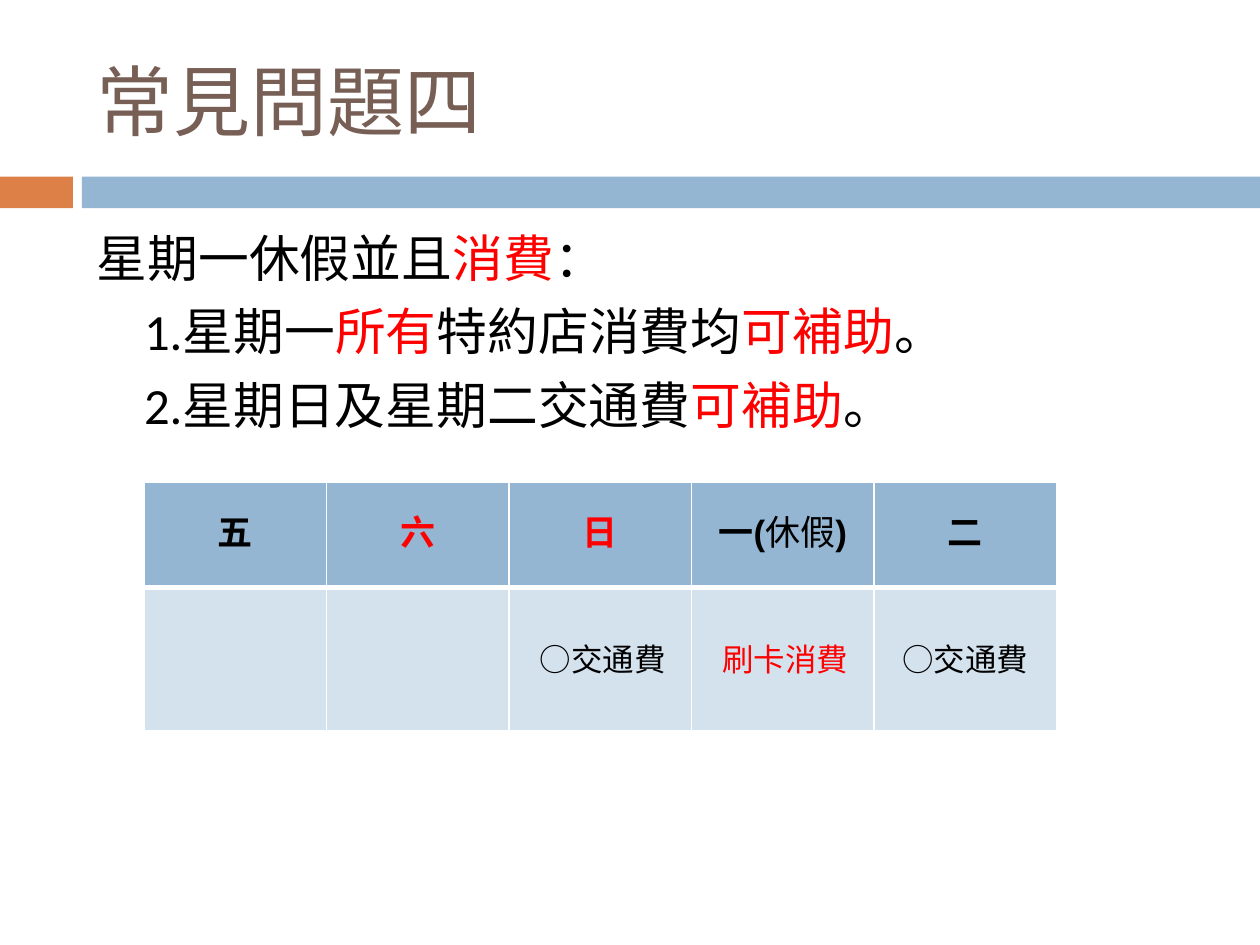
from collections import namedtuple
from dataclasses import dataclass

from lxml import etree
from pptx import Presentation
from pptx.dml.color import RGBColor
from pptx.enum.shapes import MSO_SHAPE
from pptx.enum.text import MSO_ANCHOR, MSO_AUTO_SIZE, PP_ALIGN
from pptx.oxml.ns import qn
from pptx.util import Cm, Pt

RECTANGLE = MSO_SHAPE.RECTANGLE
MIDDLE, TOP = MSO_ANCHOR.MIDDLE, MSO_ANCHOR.TOP
LEFT, CENTER = PP_ALIGN.LEFT, PP_ALIGN.CENTER
NO_AUTOFIT = MSO_AUTO_SIZE.NONE

Box = namedtuple("Box", "left top width height")


@dataclass(frozen=True)
class Theme:
    title: str = "775F55"
    ink: str = "000000"
    alert: str = "FF0000"
    accent: str = "DD8047"
    band: str = "94B6D2"
    pale: str = "D4E2ED"
    rule: str = "FFFFFF"
    font: str = "Calibri"
    table_font: str = "Arial"
    title_size: int = 44
    body_size: int = 29
    head_size: int = 20
    cell_size: int = 18


THEME = Theme()
INK, ALERT = THEME.ink, THEME.alert

BODY_LINES = [
    (0, [("星期一休假並且", INK), ("消費", ALERT), ("：", INK)]),
    (0.95, [("1.星期一", INK), ("所有", ALERT), ("特約店消費均", INK),
            ("可補助", ALERT), ("。", INK)]),
    (0.95, [("2.星期日及星期二交通費", INK), ("可補助", ALERT), ("。", INK)]),
]
HEAD_CELLS = [
    [("五", INK, True)],
    [("六", ALERT, True)],
    [("日", ALERT, True)],
    [("一(", INK, True), ("休假", INK, False), (")", INK, True)],
    [("二", INK, True)],
]
DAY_CELLS = [
    [],
    [],
    [("○交通費", INK, False)],
    [("刷卡消費", ALERT, False)],
    [("○交通費", INK, False)],
]
NUDGES = {2: 0.1, 3: 0.1}


def apply(target, values):
    for name, value in values.items():
        setattr(target, name, value)


def place(shape, box):
    apply(shape, {name: Cm(value) for name, value in box._asdict().items()})


def add_span(para, text, color, size, font=THEME.font, bold=False):
    span = para.add_run()
    span.text = text
    apply(span.font, {"name": font, "size": Pt(size), "bold": bold})
    span.font.color.rgb = RGBColor.from_string(color)


def paint(fill, color):
    fill.solid()
    fill.fore_color.rgb = RGBColor.from_string(color)


def draw_title(page, box):
    title = page.shapes.title
    place(title, box)
    apply(title.text_frame, {"vertical_anchor": MIDDLE, "auto_size": NO_AUTOFIT})
    para = title.text_frame.paragraphs[0]
    para.alignment = LEFT
    add_span(para, "常見問題四", THEME.title, THEME.title_size)


def draw_band(page, box):
    accent_width, gap = 1.47, 0.18
    start = accent_width + gap
    bars = [(0, accent_width, THEME.accent), (start, box.width - start, THEME.band)]
    for offset, width, color in bars:
        bar = page.shapes.add_shape(
            RECTANGLE, Cm(box.left + offset), Cm(box.top), Cm(width), Cm(box.height))
        bar.shadow.inherit = False
        paint(bar.fill, color)
        bar.line.fill.background()


def draw_body(page, box):
    body = page.placeholders[1]
    place(body, box)
    frame = body.text_frame
    apply(frame, {"vertical_anchor": TOP, "auto_size": NO_AUTOFIT})
    for index, (indent, spans) in enumerate(BODY_LINES):
        para = frame.add_paragraph() if index else frame.paragraphs[0]
        apply(para, {"alignment": LEFT, "space_before": Pt(7)})
        properties = para._p.get_or_add_pPr()
        properties.set("marL", str(Cm(indent)))
        properties.set("indent", "0")
        etree.SubElement(properties, qn("a:buNone"))
        for text, color in spans:
            add_span(para, text, color, THEME.body_size)


def set_borders(cell, widths):
    properties = cell._tc.get_or_add_tcPr()
    for index, (side, width) in enumerate(zip("LRTB", widths)):
        line = etree.Element(qn(f"a:ln{side}"), w=str(Pt(width)))
        fill = etree.SubElement(line, qn("a:solidFill"))
        etree.SubElement(fill, qn("a:srgbClr"), val=THEME.rule)
        properties.insert(index, line)


def fill_cell(cell, spans, size, color, borders, nudge):
    apply(cell, {
        "vertical_anchor": MIDDLE,
        "margin_left": Cm(0.18 + nudge), "margin_right": Cm(0.18),
        "margin_top": 0, "margin_bottom": 0,
    })
    paint(cell.fill, color)
    set_borders(cell, borders)
    para = cell.text_frame.paragraphs[0]
    apply(para, {"alignment": CENTER, "line_spacing": Pt(24)})
    for text, ink, bold in spans:
        add_span(para, text, ink, size, THEME.table_font, bold)


def draw_week_table(page, box):
    rows = [
        (HEAD_CELLS, 2.11, THEME.head_size, THEME.band, (1, 1, 1, 3), {}),
        (DAY_CELLS, 2.9, THEME.cell_size, THEME.pale, (1, 1, 3, 1), NUDGES),
    ]
    count = len(HEAD_CELLS)
    table = page.shapes.add_table(
        len(rows), count, *(Cm(value) for value in box)).table
    table.horz_banding = False
    for column in table.columns:
        column.width = Cm(box.width / count)
    for row, (cells, height, size, color, borders, nudges) in enumerate(rows):
        table.rows[row].height = Cm(height)
        for column, spans in enumerate(cells):
            fill_cell(table.cell(row, column), spans, size, color, borders,
                      nudges.get(column, 0))


def main():
    deck = Presentation()
    apply(deck, {"slide_width": Cm(25.4), "slide_height": Cm(19.05)})
    page = deck.slides.add_slide(deck.slide_layouts[1])
    draw_band(page, Box(0, 3.56, 25.4, 0.64))
    draw_title(page, Box(1.7, 0.64, 22.66, 2.74))
    draw_body(page, Box(1.7, 4.45, 22.66, 12.5))
    draw_week_table(page, Box(2.9, 9.73, 18.4, 5.01))
    deck.save("out.pptx")


if __name__ == "__main__":
    main()
